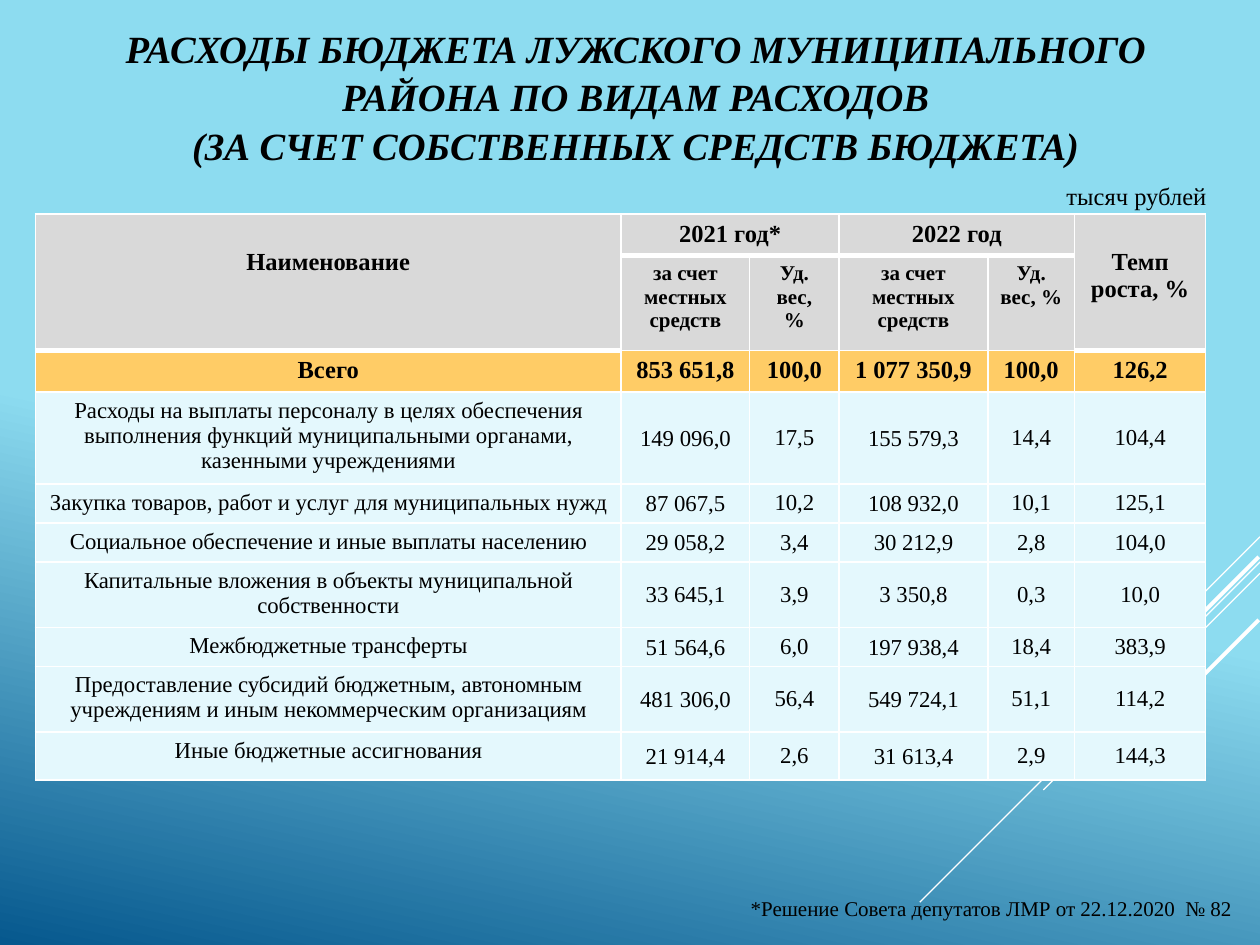
from lxml import etree
from pptx import Presentation
from pptx import util as u
from pptx.dml.color import RGBColor
from pptx.enum import shapes, text
from pptx.oxml.ns import qn

FONT = "Times New Roman"
BLACK, WHITE = "000000", "FFFFFF"
HEADER_FILL, TOTAL_FILL, BODY_FILL = "D9D9D9", "FFCC66", "E4F8FD"

COLUMN_WIDTHS = [4.65, 1.02, 0.71, 1.18, 0.69, 1.04]
ROW_HEIGHTS = [0.33, 0.74, 0.33, 0.73, 0.31, 0.31, 0.52, 0.31, 0.52, 0.38]
MONEY_COLUMNS = (1, 3)
TALL_COLUMNS = (0, 5)  # headings that span both header rows

HEADER = [
    ["Наименование", "2021 год*", "", "2022 год", "", "Темп роста, %"],
    ["", "за счет местных средств", "Уд. вес,\n%",
     "за счет местных средств", "Уд. вес, %", ""],
]
EXPENSES = [
    ["Всего", "853 651,8", "100,0", "1 077 350,9", "100,0", "126,2"],
    ["Расходы на выплаты персоналу в целях обеспечения выполнения функций "
     "муниципальными органами, казенными учреждениями",
     "149 096,0", "17,5", "155 579,3", "14,4", "104,4"],
    ["Закупка товаров, работ и услуг для муниципальных нужд",
     "87 067,5", "10,2", "108 932,0", "10,1", "125,1"],
    ["Социальное обеспечение и иные выплаты населению",
     "29 058,2", "3,4", "30 212,9", "2,8", "104,0"],
    ["Капитальные вложения в объекты муниципальной собственности",
     "33 645,1", "3,9", "3 350,8", "0,3", "10,0"],
    ["Межбюджетные трансферты",
     "51 564,6", "6,0", "197 938,4", "18,4", "383,9"],
    ["Предоставление субсидий бюджетным, автономным учреждениям "
     "и иным некоммерческим организациям",
     "481 306,0", "56,4", "549 724,1", "51,1", "114,2"],
    ["Иные бюджетные ассигнования",
     "21 914,4", "2,6", "31 613,4", "2,9", "144,3"],
]

# Start x, start y, horizontal run, width in points
DIAGONALS = [
    (10, 4.26, 0.83, 0.75),
    (10, 4.46, 2.7, 0.75),
    (10, 4.55, 1.72, 0.75),
    (9.99, 4.42, 1.57, 2.25),
    (9.99, 4.92, 1.14, 2.25),
]


def color(hex_string):
    return RGBColor.from_string(hex_string)


def write(frame, content, size, bold=False, italic=False,
          align=text.PP_ALIGN.CENTER, spacing=None):
    """Fill a text frame; each line of content becomes a paragraph."""
    frame.text = content
    for paragraph in frame.paragraphs:
        paragraph.alignment = align
        paragraph.line_spacing = spacing
        for run in paragraph.runs:
            run.font.name = FONT
            run.font.size = u.Pt(size)
            run.font.bold, run.font.italic = bold, italic
            run.font.color.rgb = color(BLACK)


def paint_background(slide):
    fill = slide.background.fill
    fill.gradient()
    fill.gradient_angle = 258
    for stop, (position, shade) in zip(
            fill.gradient_stops, [(0.54, "8DDCF0"), (1, "06588E")]):
        stop.position = position
        stop.color.rgb = color(shade)


def add_diagonal(slide, x, y, run, width):
    """Draw a line falling to the left at 45 degrees."""
    line = slide.shapes.add_connector(
        shapes.MSO_CONNECTOR.STRAIGHT,
        *[u.Inches(value) for value in (x, y, x - run, y + run)])
    line.line.color.rgb = color(WHITE)
    line.line.width = u.Pt(width)
    etree.SubElement(line._element.spPr, qn("a:effectLst"))


def add_title(slide, content):
    title = slide.shapes.title
    title.left, title.top, title.width, title.height = [
        u.Inches(value) for value in (0.59, 0.36, 8.91, 0.79)]
    title.text_frame.auto_size = text.MSO_AUTO_SIZE.NONE
    title.text_frame.vertical_anchor = text.MSO_ANCHOR.MIDDLE
    write(title.text_frame, content, 22, bold=True, italic=True, spacing=1.05)


def add_label(slide, box, content, size, **text_format):
    label = slide.shapes.add_textbox(*[u.Inches(value) for value in box])
    label.text_frame.word_wrap = True
    write(label.text_frame, content, size, **text_format)


def set_borders(cell, sides):
    """Set white borders; sides maps a tag to a width in points."""
    properties = cell._tc.get_or_add_tcPr()
    for index, (tag, width) in enumerate(sides.items()):
        border = etree.Element(qn("a:" + tag), w=str(u.Pt(width)))
        fill = etree.SubElement(border, qn("a:solidFill"))
        etree.SubElement(fill, qn("a:srgbClr"), val=WHITE)
        properties.insert(index, border)


def format_cell(cell, row, column, content):
    header, total = row < 2, row == 2
    fill = HEADER_FILL if header else TOTAL_FILL if total else BODY_FILL
    cell.fill.solid()
    cell.fill.fore_color.rgb = color(fill)

    # Only the first row has a top border, so heavy rules above stay visible
    heavy = row == 0 or (row == 1 and column in TALL_COLUMNS)
    sides = {"lnL": 1, "lnR": 1}
    if row == 0:
        sides["lnT"] = 1
    sides["lnB"] = 3 if heavy else 1
    set_borders(cell, sides)

    if row == 0 and column in TALL_COLUMNS:
        cell.margin_top = u.Inches(0.27)
    if row > 2 and column > 0:
        cell.vertical_anchor = text.MSO_ANCHOR.MIDDLE
        if column in MONEY_COLUMNS:
            cell.margin_left = cell.margin_right = u.Inches(0.01)
            cell.margin_top, cell.margin_bottom = u.Inches(0.01), 0
    if content:
        size = 12 if row == 1 else 14 if row in (0, 2) else 13
        write(cell.text_frame, content, size, bold=header or total)


def add_expense_table(slide):
    rows = HEADER + EXPENSES
    table = slide.shapes.add_table(
        len(rows), len(COLUMN_WIDTHS), u.Inches(0.28), u.Inches(1.7),
        u.Inches(sum(COLUMN_WIDTHS)), u.Inches(sum(ROW_HEIGHTS))).table
    table.first_row = table.horz_banding = False
    for column, width in zip(table.columns, COLUMN_WIDTHS):
        column.width = u.Inches(width)
    for row, height in zip(table.rows, ROW_HEIGHTS):
        row.height = u.Inches(height)

    # Headings over two rows, years over two columns
    for column in TALL_COLUMNS:
        table.cell(0, column).merge(table.cell(1, column))
    for column in MONEY_COLUMNS:
        table.cell(0, column).merge(table.cell(0, column + 1))

    for row, contents in enumerate(rows):
        for column, content in enumerate(contents):
            format_cell(table.cell(row, column), row, column, content)


def main():
    presentation = Presentation()
    presentation.slide_width, presentation.slide_height = u.Inches(10), u.Inches(7.5)
    slide = presentation.slides.add_slide(presentation.slide_layouts[5])

    # Backdrop
    paint_background(slide)
    for diagonal in DIAGONALS:
        add_diagonal(slide, *diagonal)

    # Content
    add_title(slide, "РАСХОДЫ БЮДЖЕТА ЛУЖСКОГО МУНИЦИПАЛЬНОГО РАЙОНА "
                     "ПО ВИДАМ РАСХОДОВ\v(ЗА СЧЕТ СОБСТВЕННЫХ СРЕДСТВ БЮДЖЕТА)")
    add_expense_table(slide)
    add_label(slide, (5.86, 7.06, 4.14, 0.3),
              "*Решение Совета депутатов ЛМР от 22.12.2020  № 82", 12,
              align=text.PP_ALIGN.LEFT)
    add_label(slide, (8.31, 1.39, 1.42, 0.34), "тысяч рублей", 14)

    presentation.save("out.pptx")


if __name__ == "__main__":
    main()
